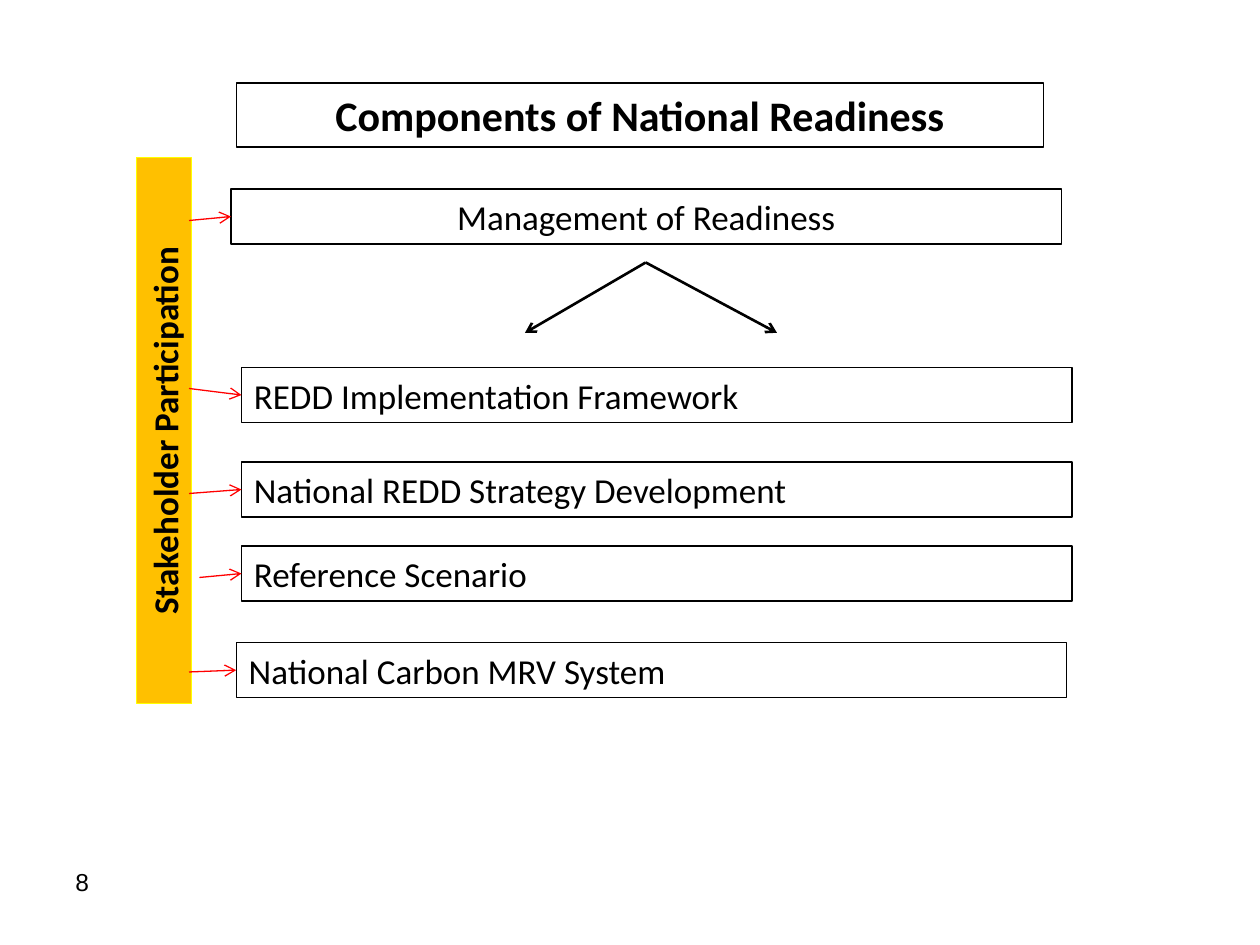
from lxml import etree
from pptx import Presentation
from pptx.dml.color import RGBColor
from pptx.enum.shapes import MSO_CONNECTOR, MSO_SHAPE
from pptx.enum.text import MSO_ANCHOR, PP_ALIGN
from pptx.oxml.ns import qn
from pptx.util import Inches, Pt

BLACK = RGBColor(0x00, 0x00, 0x00)
RED = RGBColor(0xFF, 0x00, 0x00)
AMBER = RGBColor(0xFF, 0xC0, 0x00)
YELLOW = RGBColor(0xFF, 0xFF, 0x00)
LEFT, CENTER = PP_ALIGN.LEFT, PP_ALIGN.CENTER
MIDDLE = MSO_ANCHOR.MIDDLE
RECTANGLE = MSO_SHAPE.RECTANGLE
STRAIGHT = MSO_CONNECTOR.STRAIGHT

U = Inches(1) / 12  # grid: 120 columns by 90 rows
BOX_W, BOX_H = 79.1, 5.25
LEFT_SIDE = 1


def add_box(x, y, w, h, text, align=LEFT, size=20, bold=False):
    """Add an outlined, unfilled rectangle with one line of text."""
    sp = s.shapes.add_shape(RECTANGLE, *(round(v * U) for v in (x, y, w, h)))
    sp.shadow.inherit = False
    sp.fill.background()
    sp.line.color.rgb = BLACK
    sp.line.width = Pt(0.75)
    tf = sp.text_frame
    tf.word_wrap = True
    tf.vertical_anchor = MIDDLE
    tf.text = text
    p = tf.paragraphs[0]
    p.alignment = align
    font = p.runs[0].font
    font.name, font.size, font.bold = "Calibri", Pt(size), bold
    font.color.rgb = BLACK
    return sp


def add_arrow(x1, y1, x2, y2, color, width):
    cx = s.shapes.add_connector(STRAIGHT, *(round(v * U) for v in (x1, y1, x2, y2)))
    cx.line.color.rgb = color
    cx.line.width = Pt(width)
    etree.SubElement(cx.line._get_or_add_ln(), qn("a:tailEnd"), type="arrow")
    etree.SubElement(cx._element.spPr, qn("a:effectLst"))
    return cx


prs = Presentation()
prs.slide_width, prs.slide_height = round(120 * U), round(90 * U)
s = prs.slides.add_slide(prs.slide_layouts[6])

# Slide number
tb = s.shapes.add_textbox(*(round(v * U) for v in (6, 82, 28, 6.25)))
tb.text_frame.word_wrap = True
tb.text_frame.text = "8"
font = tb.text_frame.paragraphs[0].runs[0].font
font.name, font.size = "Arial", Pt(14)
font.color.rgb = BLACK

add_box(22.5, 7.9, 76.9, 6.1, "Components of National Readiness", CENTER, 24, True)

# Stakeholder bar, turned to read upwards
bar = add_box(-10.35, 38.4, 52, BOX_H, "Stakeholder Participation", CENTER, bold=True)
bar.rotation = 270
bar.fill.solid()
bar.fill.fore_color.rgb = AMBER
bar.line.color.rgb = YELLOW

# Components: text, alignment, box left and top, arrow start
components = [
    ("Management of Readiness", CENTER, 22, 18, 18, 21),
    ("REDD Implementation Framework", LEFT, 23, 35, 18, 37),
    ("National REDD Strategy Development", LEFT, 23, 44, 18, 47),
    ("Reference Scenario", LEFT, 23, 52, 19, 55),
    ("National Carbon MRV System", LEFT, 22.5, 61.2, 18, 64),
]
for text, align, x, y, start_x, start_y in components:
    box = add_box(x, y, BOX_W, BOX_H, text, align)
    arrow = add_arrow(start_x, start_y, x, y + BOX_H / 2, RED, 0.75)
    arrow.end_connect(box, LEFT_SIDE)

# Branches from management down to the components
for end_x in (50, 74):
    add_arrow(61.5, 25, end_x, 31.7, BLACK, 1.5)

prs.save("out.pptx")
